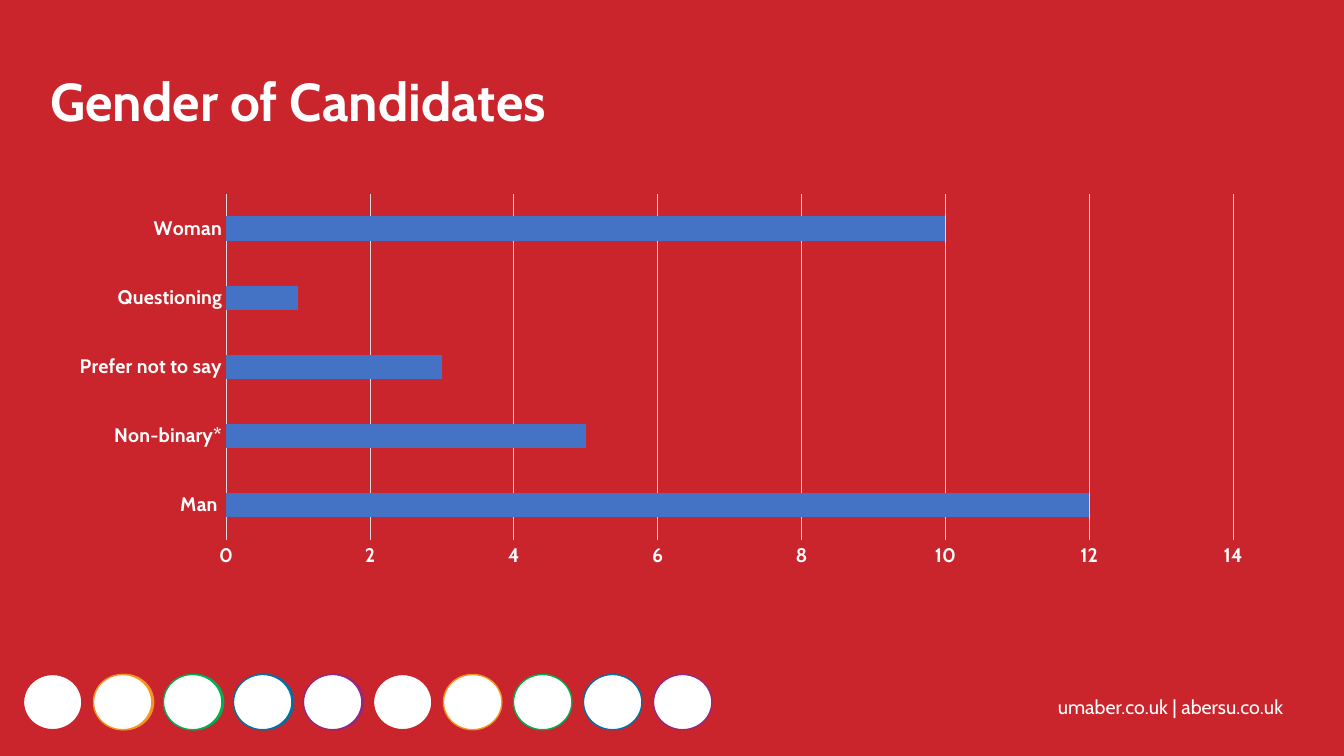
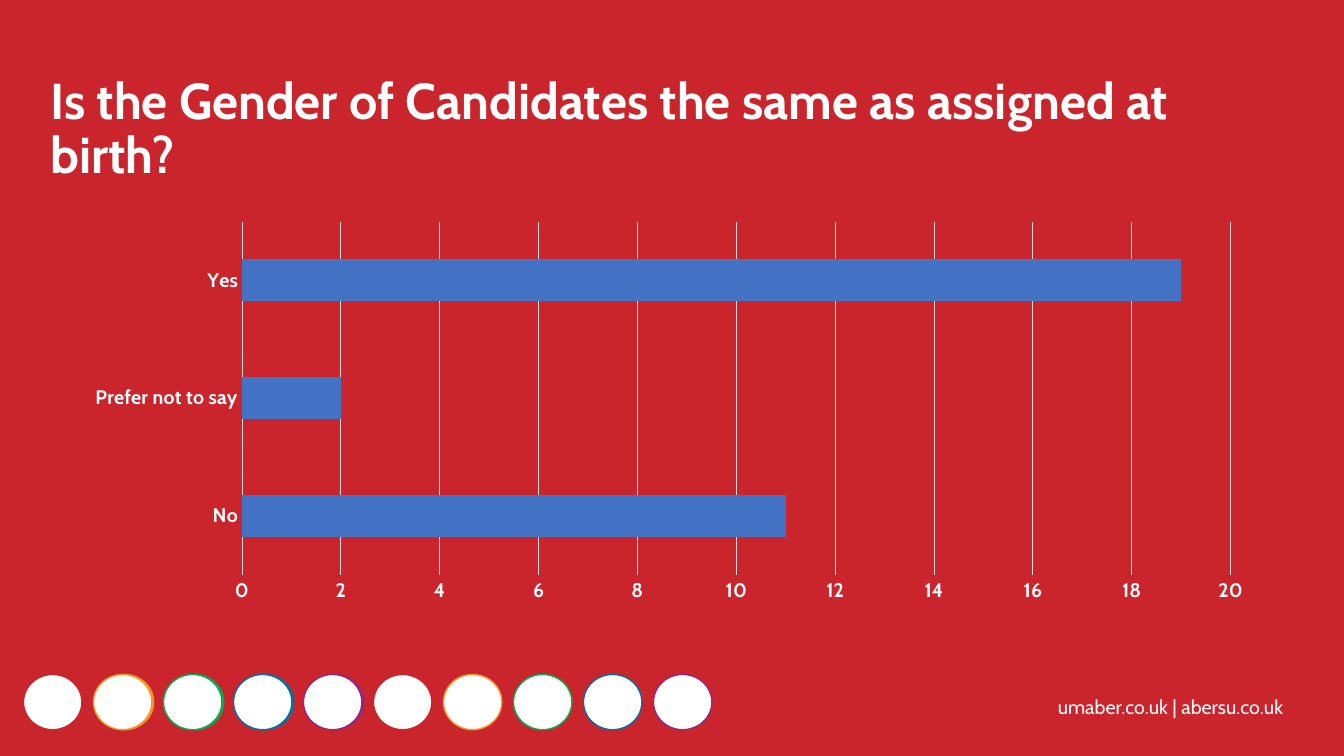
from dataclasses import dataclass

from pptx import Presentation
from pptx import util as u
from pptx.chart.data import CategoryChartData
from pptx.dml.color import RGBColor
from pptx.enum import chart as charts, shapes, text


@dataclass(frozen=True)
class Theme:
    """Colours, font and type sizes of the presentation."""

    red: str = "CA252C"
    white: str = "FFFFFF"
    grid: str = "D9D9D9"
    bar: str = "4472C4"
    rings: tuple = ("CA252C", "F7941F", "00AF50", "0171A3", "95277D")
    font: str = "Cabin"
    title_size: int = 38
    long_title_size: int = 36
    body_size: int = 14


THEME = Theme()


def set_values(target, values):
    """Set each named attribute of the target."""
    for name, value in values.items():
        setattr(target, name, value)


def set_fill(fill, color):
    """Make a fill solid in one colour."""
    fill.solid()
    fill.fore_color.rgb = RGBColor.from_string(color)


def set_line(line, color, width):
    """Give a line its colour and its width in points."""
    set_fill(line.fill, color)
    line.width = u.Pt(width)


def set_font(font, size, bold):
    """Give a font the typeface, size, weight and colour of the theme."""
    set_values(font, {"name": THEME.font, "size": u.Pt(size), "bold": bold})
    font.color.rgb = RGBColor.from_string(THEME.white)


class Deck:
    """A presentation in one style, with the slide being built."""

    def __init__(self):
        """Set the slide size and the shared background."""
        self.presentation = Presentation()
        set_values(self.presentation, {"slide_width": u.Pt(960), "slide_height": u.Pt(540)})
        set_fill(self.presentation.slide_master.background.fill, THEME.red)
        self.slide = None

    def add_slide(self):
        """Start a slide with its band of circles and its footer."""
        layout = self.presentation.slide_layouts.get_by_name("Title Only")
        self.slide = self.presentation.slides.add_slide(layout)
        for index, color in enumerate(THEME.rings):
            self.add_circle(18 + 50 * index, color, color)
        for index, color in enumerate(THEME.rings * 2):
            self.add_circle(16.75 + 50 * index, THEME.white, color)
        self.add_footer("umaber.co.uk | abersu.co.uk")

    def add_circle(self, left, fill, line):
        """Add one circle of the bottom band."""
        box = map(u.Pt, (left, 481.75, 41.75, 39.5))
        shape = self.slide.shapes.add_shape(shapes.MSO_SHAPE.OVAL, *box)
        shape.shadow.inherit = False
        set_fill(shape.fill, fill)
        set_line(shape.line, line, 1)

    def add_footer(self, words):
        """Add the web addresses at the bottom right."""
        shape = self.slide.shapes.add_textbox(*map(u.Pt, (748.5, 492.5, 201.5, 24.5)))
        shape.text_frame.word_wrap = True
        paragraph = shape.text_frame.paragraphs[0]
        paragraph.text = words
        set_font(paragraph.font, THEME.body_size, False)

    def add_title(self, words, width, size):
        """Fill and place the title placeholder."""
        title = self.slide.shapes.title
        box = {"left": 28.8, "top": 50.4, "width": width, "height": 63.4}
        set_values(title, {name: u.Pt(length) for name, length in box.items()})
        set_values(title.text_frame, {
            "text": words,
            "word_wrap": True,
            "auto_size": text.MSO_AUTO_SIZE.NONE,
            "vertical_anchor": text.MSO_ANCHOR.TOP,
        })
        paragraph = title.text_frame.paragraphs[0]
        set_values(paragraph, {"alignment": text.PP_ALIGN.LEFT, "line_spacing": 0.9})
        set_font(paragraph.font, size, True)

    def add_bar_chart(self, box, counts, maximum):
        """Add a horizontal bar chart of counts by answer."""
        data = CategoryChartData()
        data.categories = list(counts)
        data.add_series("Series 1", list(counts.values()))
        chart = self.slide.shapes.add_chart(
            charts.XL_CHART_TYPE.BAR_CLUSTERED, *map(u.Pt, box), data).chart
        set_values(chart, {"has_title": False, "has_legend": False})
        set_font(chart.font, THEME.body_size, True)
        plot = chart.plots[0]
        set_values(plot, {"gap_width": 182, "vary_by_categories": False})
        set_fill(plot.series[0].format.fill, THEME.bar)
        for axis in (chart.category_axis, chart.value_axis):
            set_values(axis, {
                "major_tick_mark": charts.XL_TICK_MARK.NONE,
                "minor_tick_mark": charts.XL_TICK_MARK.NONE,
            })
            set_font(axis.tick_labels.font, THEME.body_size, True)
        set_line(chart.category_axis.format.line, THEME.grid, 0.75)
        set_values(chart.value_axis, {
            "minimum_scale": 0,
            "maximum_scale": maximum,
            "major_unit": 2,
            "has_major_gridlines": True,
        })
        chart.value_axis.format.line.fill.background()
        set_line(chart.value_axis.major_gridlines.format.line, THEME.grid, 0.75)


def main():
    """Build and save the two slides."""
    deck = Deck()

    deck.add_slide()
    deck.add_title("Gender of Candidates", 656.6, THEME.title_size)
    gender_counts = {
        "Man ": 12,
        "Non-binary*": 5,
        "Prefer not to say": 3,
        "Questioning": 1,
        "Woman": 10,
    }
    deck.add_bar_chart((39.6, 133.2, 865.4, 278), gender_counts, 14)

    deck.add_slide()
    deck.add_title("Is the Gender of Candidates the same as assigned at birth?",
                   822.2, THEME.long_title_size)
    birth_counts = {"No": 11, "Prefer not to say": 2, "Yes": 19}
    deck.add_bar_chart((51.1, 152.6, 853.9, 283.7), birth_counts, 20)

    deck.presentation.save("out.pptx")


if __name__ == "__main__":
    main()
